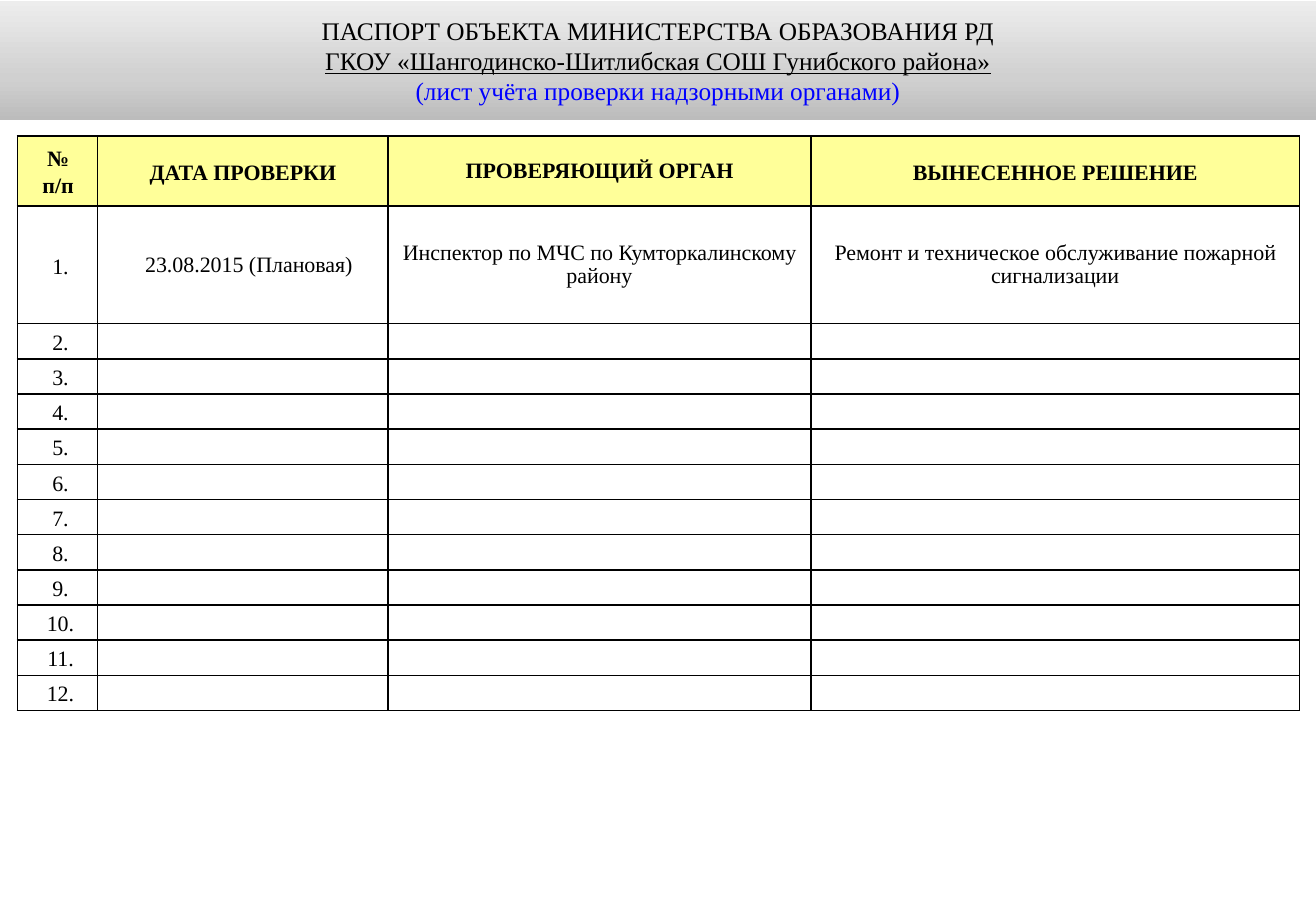
from copy import deepcopy
from dataclasses import dataclass

from lxml import etree
from pptx import Presentation, util as u
from pptx.dml.color import RGBColor
from pptx.enum import shapes, text
from pptx.oxml import ns


@dataclass(frozen=True)
class Theme:
    font: str = "Times New Roman"
    ink: str = "000000"
    accent: str = "0000FF"
    header: str = "FFFF99"
    cell: str = "FFFFFF"
    banner: tuple = ((0, "BCBCBC"), (0.35, "D0D0D0"), (1, "EDEDED"))
    title_size: int = 15
    table_size: int = 13
    border: float = 1


class Sheet:
    def __init__(self, slide, theme):
        self.slide, self.theme = slide, theme

    def run(self, paragraph, words, size, color=None, bold=False, underline=False):
        run = paragraph.add_run()
        run.text = words
        font = run.font
        font.name, font.size = self.theme.font, u.Pt(size)
        font.bold, font.underline = bold, underline
        font.color.rgb = RGBColor.from_string(color or self.theme.ink)

    def banner(self, left, top, width, height, lines):
        band = self.slide.shapes.add_shape(
            shapes.MSO_SHAPE.RECTANGLE, *map(u.Cm, (left, top, width, height)))
        band.shadow.inherit = False
        band.line.fill.background()
        # Three-stop gradient running from bottom to top
        band.fill.gradient()
        stop_list = band._element.spPr.find(".//" + ns.qn("a:gsLst"))
        stop_list.append(deepcopy(stop_list[-1]))
        for stop, (position, color) in zip(band.fill.gradient_stops, self.theme.banner):
            stop.position = position
            stop.color.rgb = RGBColor.from_string(color)
        band.fill.gradient_angle = 90
        frame = band.text_frame
        frame.word_wrap = True
        frame.vertical_anchor = text.MSO_ANCHOR.MIDDLE
        for i, (words, style) in enumerate(lines):
            paragraph = frame.add_paragraph() if i else frame.paragraphs[0]
            paragraph.alignment = text.PP_ALIGN.CENTER
            self.run(paragraph, words, self.theme.title_size, **style)

    def table(self, left, top, widths, heights):
        grid = self.slide.shapes.add_table(
            len(heights), len(widths),
            *map(u.Cm, (left, top, sum(widths), sum(heights)))).table
        for column, width in zip(grid.columns, widths):
            column.width = u.Cm(width)
        for row, height in zip(grid.rows, heights):
            row.height = u.Cm(height)
        return grid

    def cell(self, cell, lines=(), fill=None, bold=False, indent=0, spacing=1.15):
        cell.margin_left = cell.margin_right = u.Cm(0.08)
        cell.margin_top = cell.margin_bottom = 0
        cell.vertical_anchor = text.MSO_ANCHOR.MIDDLE
        cell.fill.solid()
        cell.fill.fore_color.rgb = RGBColor.from_string(fill or self.theme.cell)
        self.borders(cell)
        frame = cell.text_frame
        for i, words in enumerate(lines):
            paragraph = frame.add_paragraph() if i else frame.paragraphs[0]
            paragraph.alignment = text.PP_ALIGN.CENTER
            paragraph.line_spacing = spacing
            paragraph._p.get_or_add_pPr().set("marL", str(u.Cm(indent)))
            self.run(paragraph, words, self.theme.table_size, bold=bold)
        if not lines:  # keeps an empty row from growing
            etree.SubElement(frame.paragraphs[0]._p, ns.qn("a:endParaRPr"),
                             sz=str(self.theme.table_size * 100))

    def borders(self, cell):
        properties = cell._tc.get_or_add_tcPr()
        for i, side in enumerate("LRTB"):
            line = etree.Element(ns.qn("a:ln" + side), w=str(u.Pt(self.theme.border)))
            fill = etree.SubElement(line, ns.qn("a:solidFill"))
            etree.SubElement(fill, ns.qn("a:srgbClr"), val=self.theme.ink)
            properties.insert(i, line)


def main():
    deck = Presentation()
    deck.slide_width, deck.slide_height = u.Cm(27.51), u.Cm(19.05)
    theme = Theme()
    sheet = Sheet(deck.slides.add_slide(deck.slide_layouts[6]), theme)

    # Inspection log
    exact = u.Pt(14)
    headings = [
        (["№", "п/п"], {"indent": 0.03}),
        (["ДАТА ПРОВЕРКИ"], {}),
        (["ПРОВЕРЯЮЩИЙ ОРГАН"], {"spacing": exact}),
        (["ВЫНЕСЕННОЕ РЕШЕНИЕ"], {}),
    ]
    first_check = [
        (["23.08.2015 (Плановая)"], {"indent": 0.25, "spacing": exact}),
        (["Инспектор по МЧС по Кумторкалинскому району"], {"spacing": exact}),
        (["Ремонт и техническое обслуживание пожарной сигнализации"],
         {"spacing": exact}),
    ]
    entries = 12
    log = sheet.table(0.36, 2.84, [1.68, 6.07, 8.84, 10.21],
                      [1.47, 2.46] + [0.735] * (entries - 1))
    for column, (lines, style) in enumerate(headings):
        sheet.cell(log.cell(0, column), lines, theme.header, bold=True, **style)
    for number in range(1, entries + 1):
        sheet.cell(log.cell(number, 0), [f"{number}."], indent=0.13)
        checks = first_check if number == 1 else [([], {})] * 3
        for column, (lines, style) in enumerate(checks, 1):
            sheet.cell(log.cell(number, column), lines, **style)

    # Title banner
    sheet.banner(0, 0.02, 27.51, 2.49, [
        ("ПАСПОРТ ОБЪЕКТА МИНИСТЕРСТВА ОБРАЗОВАНИЯ РД", {}),
        ("ГКОУ «Шангодинско-Шитлибская СОШ Гунибского района»", {"underline": True}),
        ("(лист учёта проверки надзорными органами)", {"color": theme.accent}),
    ])

    deck.save("out.pptx")


if __name__ == "__main__":
    main()
